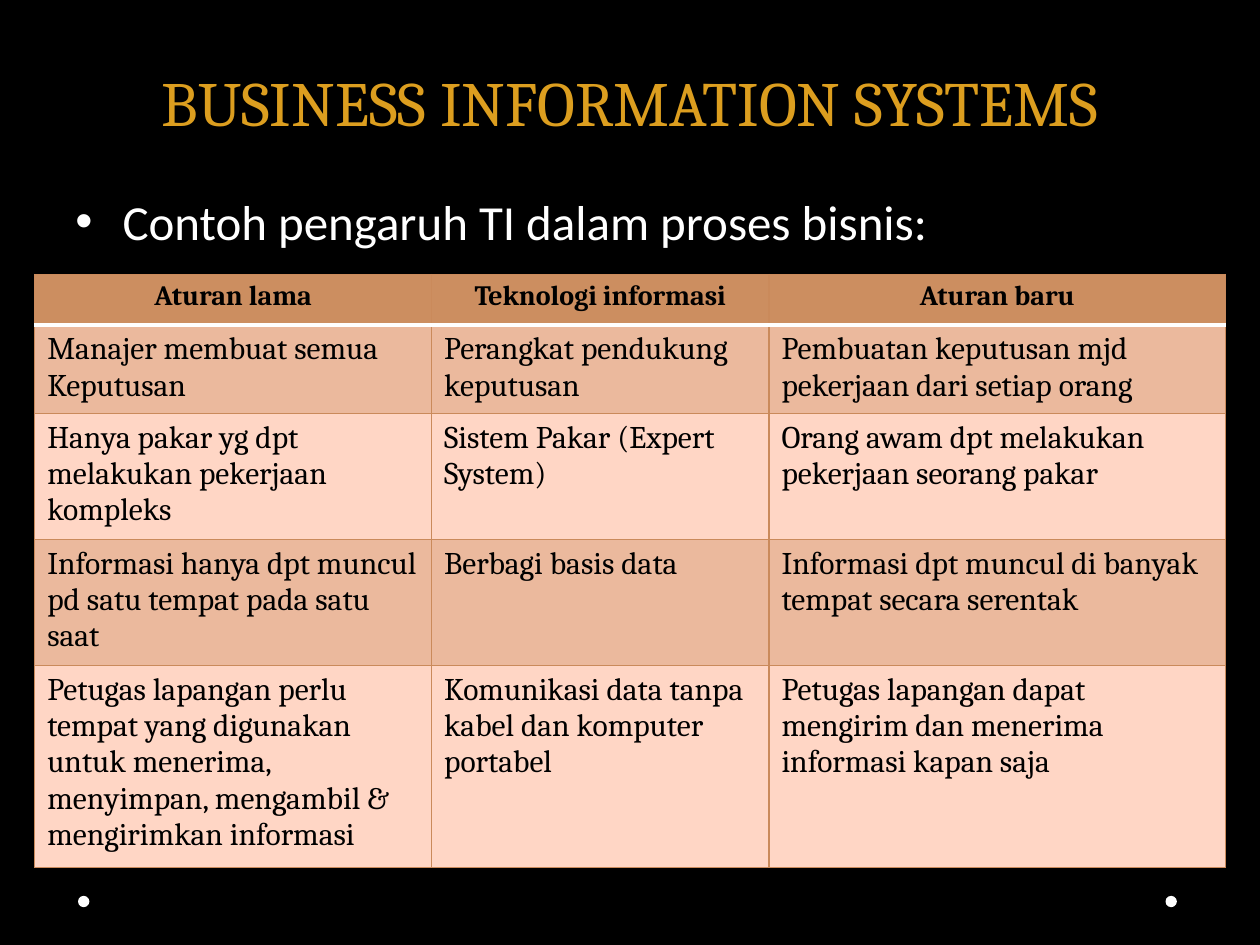
from lxml import etree
from pptx import Presentation
from pptx.dml.color import RGBColor
from pptx.enum.shapes import MSO_SHAPE
from pptx.enum.text import MSO_ANCHOR, PP_ALIGN
from pptx.oxml.ns import qn
from pptx.util import Pt

OVAL = MSO_SHAPE.OVAL
TOP, BOTTOM = MSO_ANCHOR.TOP, MSO_ANCHOR.BOTTOM
LEFT, CENTER = PP_ALIGN.LEFT, PP_ALIGN.CENTER

COLORS = {
    "back": "000000",
    "white": "FFFFFF",
    "title": "DC9E1F",
    "ink": "000000",
    "head": "CC8E60",
    "band": "EBB99D",
    "plain": "FFD6C5",
    "line": "CA8A5B",
}

WIDTHS = [226.8, 192.8, 261]
HEIGHTS = [29, 48.8, 69.6, 69.6, 111.4]
ROWS = [
    ["Aturan lama", "Teknologi informasi", "Aturan baru"],
    [
        "Manajer membuat semua Keputusan",
        "Perangkat pendukung keputusan",
        "Pembuatan keputusan mjd pekerjaan dari setiap orang",
    ],
    [
        "Hanya pakar yg dpt melakukan pekerjaan kompleks",
        "Sistem Pakar (Expert System)",
        "Orang awam dpt melakukan pekerjaan seorang pakar",
    ],
    [
        "Informasi hanya dpt muncul pd satu tempat pada satu saat",
        "Berbagi basis data",
        "Informasi dpt muncul di banyak tempat secara serentak",
    ],
    [
        "Petugas lapangan perlu tempat yang digunakan untuk menerima, "
        "menyimpan, mengambil & mengirimkan informasi",
        "Komunikasi data tanpa kabel dan komputer portabel",
        "Petugas lapangan dapat mengirim dan menerima informasi kapan saja",
    ],
]


def rgb(name):
    return RGBColor.from_string(COLORS[name])


def paint(fill, name):
    fill.solid()
    fill.fore_color.rgb = rgb(name)


def write(frame, text, size=18, color="ink", font="Cambria", bold=False,
          align=LEFT, anchor=TOP, space=None):
    frame.word_wrap = True
    frame.vertical_anchor = anchor
    para = frame.paragraphs[0]
    para.alignment = align
    if space:
        para.line_spacing = Pt(space)
    run = para.add_run()
    run.text = text
    run.font.size = Pt(size)
    run.font.name = font
    run.font.bold = bold
    run.font.color.rgb = rgb(color)
    return para


def add_box(slide, left, top, width, height):
    return slide.shapes.add_textbox(
        Pt(left), Pt(top), Pt(width), Pt(height)).text_frame


def add_bullet(para, indent):
    props = para._p.get_or_add_pPr()
    props.set("marL", str(Pt(indent)))
    props.set("indent", str(-Pt(indent)))
    etree.SubElement(props, qn("a:buFont"), typeface="Arial")
    etree.SubElement(props, qn("a:buChar"), char="•")


def add_dot(slide, left, top, size):
    dot = slide.shapes.add_shape(OVAL, Pt(left), Pt(top), Pt(size), Pt(size))
    dot.shadow.inherit = False
    paint(dot.fill, "white")
    dot.line.fill.background()


def add_edge(cell, side, name, width):
    props = cell._tc.get_or_add_tcPr()
    edge = etree.SubElement(props, qn("a:ln" + side), w=str(Pt(width)))
    fill = etree.SubElement(edge, qn("a:solidFill"))
    etree.SubElement(fill, qn("a:srgbClr"), val=COLORS[name])


def style_cell(cell, row):
    rule = {0: "B", 1: "T"}.get(row)
    for side in "LRTB":
        if side == rule:
            add_edge(cell, side, "white", 2.25)
        else:
            add_edge(cell, side, "line", 0.75)
    paint(cell.fill, "head" if row == 0 else "band" if row % 2 else "plain")


def add_grid(slide, left, top):
    grid = slide.shapes.add_table(
        len(ROWS), len(WIDTHS), Pt(left), Pt(top),
        Pt(sum(WIDTHS)), Pt(sum(HEIGHTS))).table
    for col, width in zip(grid.columns, WIDTHS):
        col.width = Pt(width)
    for row, texts in enumerate(ROWS):
        grid.rows[row].height = Pt(HEIGHTS[row])
        look = {"size": 16, "bold": True, "align": CENTER} if row == 0 else {}
        for col, text in enumerate(texts):
            cell = grid.cell(row, col)
            style_cell(cell, row)
            write(cell.text_frame, text, **look)


def main():
    deck = Presentation()
    deck.slide_width, deck.slide_height = Pt(720), Pt(540)
    slide = deck.slides.add_slide(deck.slide_layouts[6])
    paint(slide.background.fill, "back")
    for left in (44.6, 666):
        add_dot(slide, left, 511.9, 6.5)
    write(add_box(slide, 36, 0, 648, 82.8), "BUSINESS INFORMATION SYSTEMS",
          size=36, color="title", align=CENTER, anchor=BOTTOM, space=58)
    lead = write(add_box(slide, 36, 105.8, 648, 402.5),
                 "Contoh pengaruh TI dalam proses bisnis:",
                 size=28, color="white", font="Calibri")
    add_bullet(lead, 27)
    add_grid(slide, 19.8, 156.8)
    deck.save("out.pptx")


if __name__ == "__main__":
    main()
